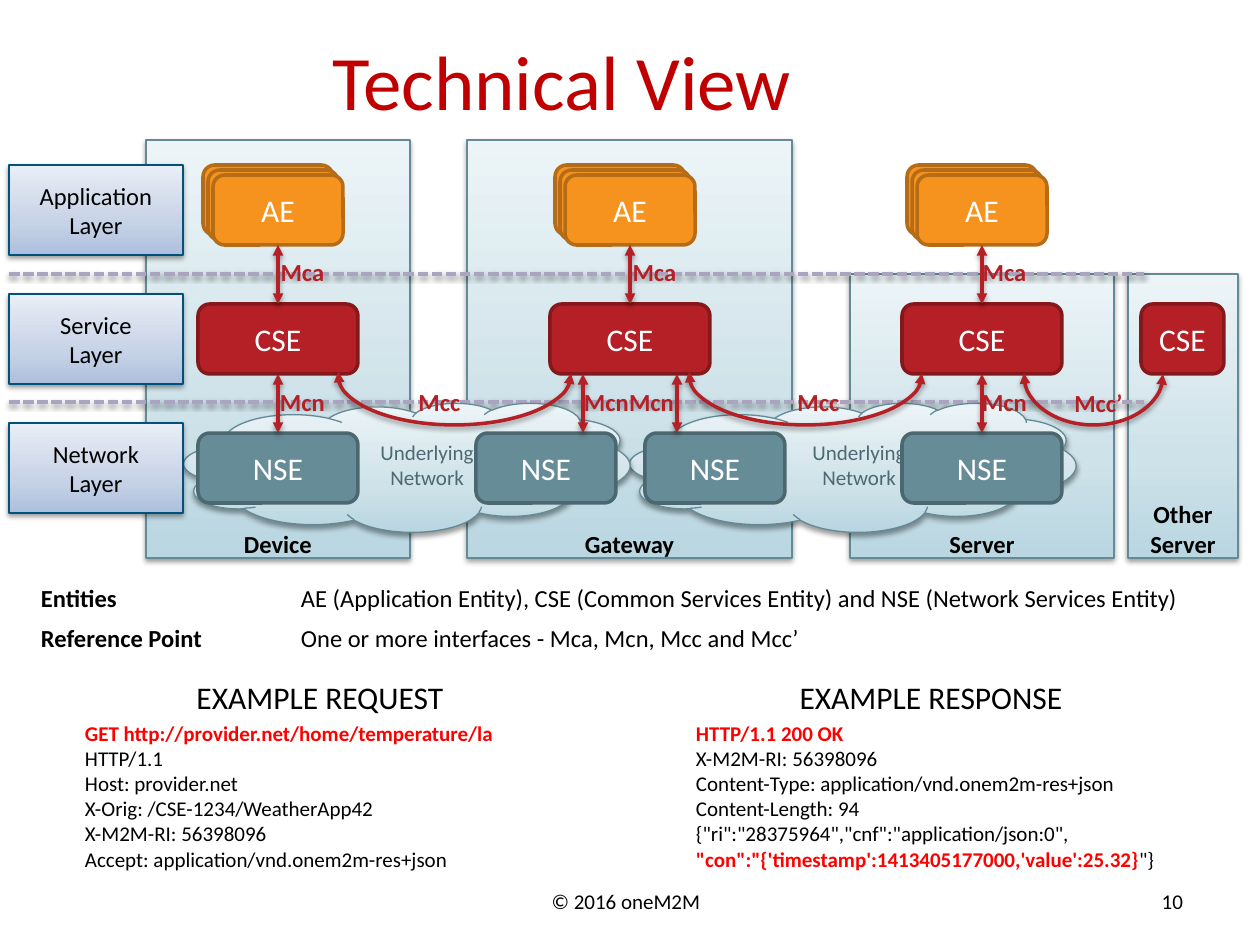
from copy import deepcopy
from typing import NamedTuple

from lxml import etree
from pptx import Presentation
from pptx.dml.color import RGBColor
from pptx.enum.dml import MSO_LINE
from pptx.enum.shapes import MSO_CONNECTOR, MSO_SHAPE
from pptx.enum.text import MSO_ANCHOR, PP_ALIGN
from pptx.oxml.ns import qn
from pptx.util import Pt

EMU_PER_PX = 914400 / 126
FONT = "Calibri"
RECTANGLE, ROUNDED = MSO_SHAPE.RECTANGLE, MSO_SHAPE.ROUNDED_RECTANGLE
CLOUD, ARC = MSO_SHAPE.CLOUD, MSO_SHAPE.ARC
STRAIGHT = MSO_CONNECTOR.STRAIGHT
SHORT_DASH = MSO_LINE.SQUARE_DOT
LEFT, CENTER, RIGHT = PP_ALIGN.LEFT, PP_ALIGN.CENTER, PP_ALIGN.RIGHT
TOP, MIDDLE, BOTTOM = MSO_ANCHOR.TOP, MSO_ANCHOR.MIDDLE, MSO_ANCHOR.BOTTOM

BLACK = RGBColor(0, 0, 0)
WHITE = RGBColor(255, 255, 255)
TITLE_RED = RGBColor(0xC0, 0, 0)
BRIGHT_RED = RGBColor(255, 0, 0)
CRIMSON = RGBColor(0xB4, 0x20, 0x25)
DARK_CRIMSON = RGBColor(0x85, 0x18, 0x1B)
ORANGE = RGBColor(0xF6, 0x92, 0x1E)
DARK_ORANGE = RGBColor(0xB6, 0x6C, 0x16)
TEAL = RGBColor(0x66, 0x8C, 0x97)
DARK_TEAL = RGBColor(0x4B, 0x68, 0x70)
PANEL_EDGE = RGBColor(0x63, 0x8A, 0x95)
CLOUD_TEXT = RGBColor(0x4C, 0x69, 0x71)
LAYER_EDGE = RGBColor(0, 0x52, 0x7D)
LAVENDER = RGBColor(0xAA, 0xA4, 0xC0)
PALE_TEAL = [RGBColor.from_string(code) for code in ("B9D6E1", "CEE2E9", "ECF4F7")]
PALE_BLUE = [RGBColor.from_string(code) for code in ("ADBFDD", "C6D2E6", "E9EEF6")]

COLUMNS = (278, 630, 982)
APPLICATION_Y, SERVICE_Y, NETWORK_Y = 175, 304, 433
NODE_HEIGHT = 70


class Box(NamedTuple):
    x: int
    y: int
    width: int
    height: int


class Panel(NamedTuple):
    box: Box
    caption: str


class NodeStyle(NamedTuple):
    label: str
    fill: RGBColor
    edge: RGBColor


class Span(NamedTuple):
    text: str
    color: RGBColor = BLACK
    bold: bool = False


AE = NodeStyle("AE", ORANGE, DARK_ORANGE)
CSE = NodeStyle("CSE", CRIMSON, DARK_CRIMSON)
NSE = NodeStyle("NSE", TEAL, DARK_TEAL)

PANELS = (
    Panel(Box(1128, 274, 110, 284), "Other\nServer"),
    Panel(Box(146, 140, 264, 418), "Device"),
    Panel(Box(467, 140, 325, 418), "Gateway"),
    Panel(Box(850, 274, 264, 284), "Server"),
)
LABELS = (
    ("Mca", 257, (278, 630, 980)),
    ("Mcn", 387, (278, 582, 627, 980)),
    ("Mcc", 387, (415, 794)),
    ("Mcc’", 388, (1074,)),
)
DEFINITIONS = (
    ("Entities", "AE (Application Entity), CSE (Common Services Entity) and NSE (Network Services Entity)"),
    ("Reference Point", "One or more interfaces - Mca, Mcn, Mcc and Mcc’"),
)
REQUEST = (
    Span("GET http://provider.net/home/temperature/la ", BRIGHT_RED, True),
    Span("HTTP/1.1\nHost: provider.net\nX-Orig: /CSE-1234/WeatherApp42\n"
         "X-M2M-RI: 56398096\nAccept: application/vnd.onem2m-res+json"),
)
RESPONSE = (
    Span("HTTP/1.1 200 OK\n", BRIGHT_RED, True),
    Span("X-M2M-RI: 56398096\nContent-Type: application/vnd.onem2m-res+json\n"
         "Content-Length: 94\n{\"ri\":\"28375964\",\"cnf\":\"application/json:0\",\n"),
    Span("\"con\":\"{'timestamp':1413405177000,'value':25.32}", BRIGHT_RED, True),
    Span("\"}"),
)


def px(length: int) -> int:
    return round(length * EMU_PER_PX)


def set_effects(shape, shadow: bool) -> None:
    properties = shape._element.spPr
    effects = properties.find(qn("a:effectLst"))
    if effects is None:
        effects = etree.SubElement(properties, qn("a:effectLst"))
    if shadow:
        outer = etree.SubElement(effects, qn("a:outerShdw"), blurRad=str(Pt(3.1)),
                                 dist=str(Pt(1.6)), dir="5400000", rotWithShape="0")
        color = etree.SubElement(outer, qn("a:srgbClr"), val="000000")
        etree.SubElement(color, qn("a:alpha"), val="38000")


def set_line(shape, color: RGBColor, width: float, arrows: bool = False) -> None:
    shape.line.color.rgb = color
    shape.line.width = Pt(width)
    if arrows:
        for end in ("a:headEnd", "a:tailEnd"):
            etree.SubElement(shape.line._ln, qn(end), type="triangle")


def write(shape, text: str, size: int, color: RGBColor = BLACK, bold: bool = False,
          align=CENTER, anchor=MIDDLE, insets=(0, 0, 0, 0), wrap: bool = True):
    frame = shape.text_frame
    frame.word_wrap = wrap
    frame.vertical_anchor = anchor
    frame.margin_left, frame.margin_top, frame.margin_right, frame.margin_bottom = map(px, insets)
    paragraph = frame.paragraphs[0]
    paragraph.text = text
    paragraph.alignment = align
    style_font(paragraph.font, size, color, bold)
    return paragraph


def style_font(font, size: int, color: RGBColor, bold: bool = False) -> None:
    font.name, font.size, font.bold = FONT, Pt(size), bold
    font.color.rgb = color


def add_text(slide, box: Box, text: str, size: int, **options):
    shape = slide.shapes.add_textbox(*map(px, box))
    return shape, write(shape, text, size, **options)


def add_gradient(slide, kind, box: Box, colors: list[RGBColor], edge: RGBColor):
    shape = slide.shapes.add_shape(kind, *map(px, box))
    shape.shadow.inherit = False
    shape.fill.gradient()
    shape.fill.gradient_angle = 90
    stop_list = shape._element.spPr.find(".//" + qn("a:gsLst"))
    stop_list.append(deepcopy(stop_list[0]))
    for stop, color, position in zip(shape.fill.gradient_stops, colors, (0, 0.35, 1)):
        stop.color.rgb = color
        stop.position = position
    set_line(shape, edge, 0.75)
    set_effects(shape, True)
    return shape


def add_node(slide, style: NodeStyle, center: int, y: int, width: int, label: bool = True) -> None:
    box = Box(center - width // 2, y, width, NODE_HEIGHT)
    shape = slide.shapes.add_shape(ROUNDED, *map(px, box))
    shape.shadow.inherit = False
    shape.fill.solid()
    shape.fill.fore_color.rgb = style.fill
    set_line(shape, style.edge, 2)
    if label:
        write(shape, style.label, 18, WHITE)


def add_straight(slide, start: tuple[int, int], end: tuple[int, int], color: RGBColor, dashed: bool) -> None:
    line = slide.shapes.add_connector(STRAIGHT, *map(px, start + end))
    if dashed:
        line.line.dash_style = SHORT_DASH
    set_line(line, color, 2, arrows=not dashed)
    set_effects(line, True)


def add_arc(slide, x: int, width: int) -> None:
    arc = slide.shapes.add_shape(ARC, *map(px, Box(x, 325, width, 100)))
    arc.shadow.inherit = False
    arc.adjustments[0], arc.adjustments[1] = 215.51, 108.94
    arc.fill.background()
    set_line(arc, CRIMSON, 2, arrows=True)
    set_effects(arc, True)


def add_spans(paragraph, spans, size: int) -> None:
    for span in spans:
        for index, part in enumerate(span.text.split("\n")):
            if index:
                paragraph.add_line_break()
            if part:
                run = paragraph.add_run()
                run.text = part
                style_font(run.font, size, span.color, span.bold)


def add_example(slide, x: int, heading: str, spans) -> None:
    shape, _ = add_text(slide, Box(x, 672, 496, 233), heading, 18, anchor=TOP, insets=(13, 6, 13, 6))
    paragraph = shape.text_frame.add_paragraph()
    paragraph.space_before = Pt(2.4)
    add_spans(paragraph, spans, 12)


def add_definitions(slide) -> None:
    shape, first = add_text(slide, Box(28, 577, 1201, 82), "", 14, align=LEFT, anchor=TOP, insets=(13, 6, 13, 6))
    for index, (term, meaning) in enumerate(DEFINITIONS):
        paragraph = shape.text_frame.add_paragraph() if index else first
        paragraph.space_after = Pt(6)
        tabs = etree.Element(qn("a:tabLst"))
        etree.SubElement(tabs, qn("a:tab"), pos=str(px(260)), algn="l")
        properties = paragraph._p.get_or_add_pPr()
        default = properties.find(qn("a:defRPr"))
        if default is None:
            properties.append(tabs)
        else:
            default.addprevious(tabs)
        add_spans(paragraph, (Span(term, bold=True), Span("\t" + meaning)), 14)


def main() -> None:
    presentation = Presentation()
    presentation.slide_width, presentation.slide_height = px(1260), px(945)
    slide = presentation.slides.add_slide(presentation.slide_layouts[6])

    for panel in PANELS:
        add_gradient(slide, RECTANGLE, panel.box, PALE_TEAL, PANEL_EDGE)
    for y in (402, 274):
        add_straight(slide, (9, y), (1144, y), LAVENDER, dashed=True)
    for x, inset in ((630, 57), (184, 85)):
        cloud = add_gradient(slide, CLOUD, Box(x, 403, 446, 129), PALE_TEAL, PANEL_EDGE)
        write(cloud, "Underlying\nNetwork", 12, CLOUD_TEXT, insets=(inset, 6, 13, 6))

    for center in COLUMNS:
        for offset in (10, 5, 0):
            add_node(slide, AE, center - offset, APPLICATION_Y - offset, 130, label=offset == 0)
        add_node(slide, CSE, center, SERVICE_Y, 160)
    add_node(slide, CSE, 1182, SERVICE_Y, 83)
    for center, width in ((278, 160), (546, 140), (715, 140), (982, 160)):
        add_node(slide, NSE, center, NETWORK_Y, width)
    for bottom, centers in ((SERVICE_Y, COLUMNS), (NETWORK_Y, (278, 583, 677, 982))):
        for x in centers:
            add_straight(slide, (x, bottom), (x, bottom - 59), CRIMSON, dashed=False)

    for panel in PANELS:
        add_text(slide, panel.box, panel.caption, 14, bold=True, anchor=BOTTOM)
    for index, name in enumerate(("Application", "Service", "Network")):
        layer = add_gradient(slide, RECTANGLE, Box(9, 165 + 129 * index, 174, 90), PALE_BLUE, LAYER_EDGE)
        write(layer, f"{name}\nLayer", 14, insets=(5, 6, 5, 6))
    for x, width in ((338, 233), (689, 233), (1024, 139)):
        add_arc(slide, x, width)
    for label, y, lefts in LABELS:
        for x in lefts:
            add_text(slide, Box(x, y, 49, 30), label, 14, color=CRIMSON, bold=True, wrap=False)

    _, title = add_text(slide, Box(63, 47, 998, 80), "Technical View", 44, color=TITLE_RED)
    title.line_spacing = 0.85
    add_definitions(slide)
    add_example(slide, 72, "EXAMPLE REQUEST", REQUEST)
    add_example(slide, 683, "EXAMPLE RESPONSE", RESPONSE)
    add_text(slide, Box(538, 882, 176, 38), "© 2016 oneM2M", 12, wrap=False)
    add_text(slide, Box(1144, 882, 39, 38), "10", 12, align=RIGHT, wrap=False)
    presentation.save("out.pptx")


if __name__ == "__main__":
    main()
